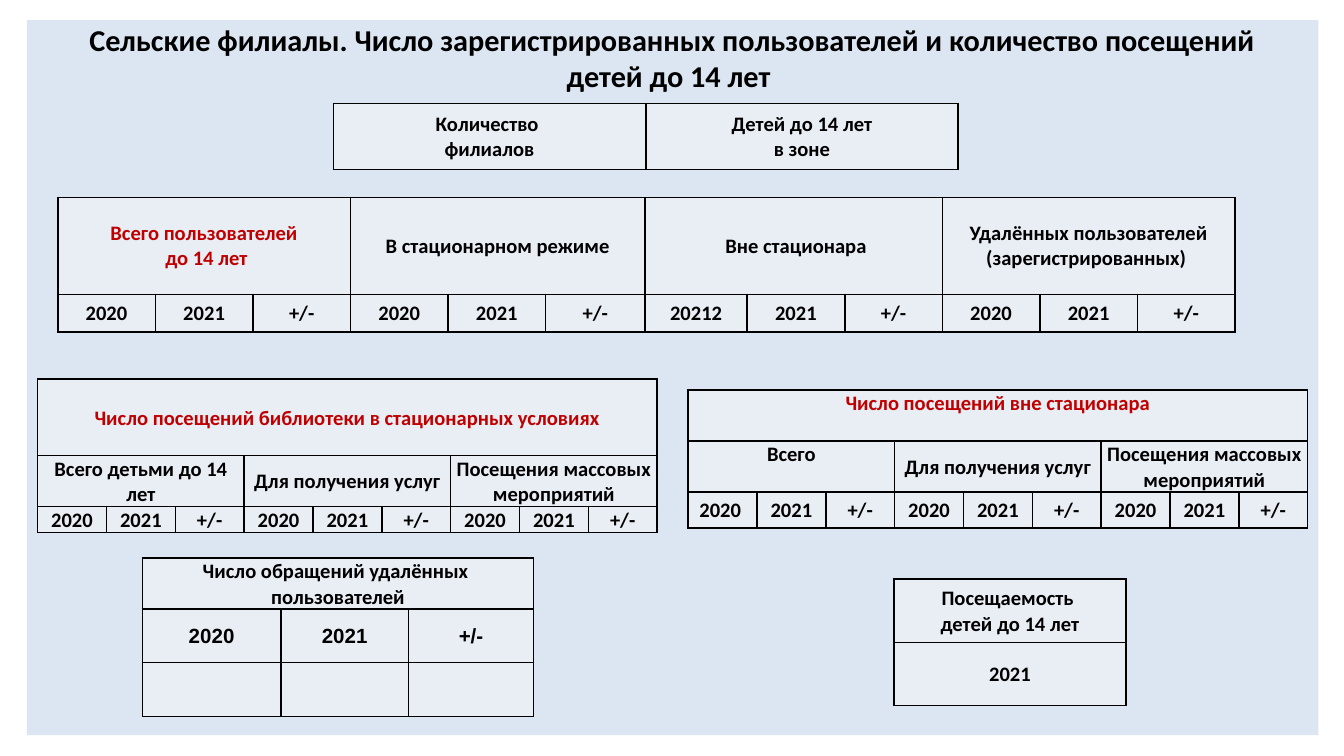
"""Build a slide of blank report tables on children's library use in rural branches."""
import lxml.etree
import pptx
import pptx.dml.color
import pptx.enum.shapes
import pptx.enum.text
import pptx.oxml.ns
import pptx.util

Inches = pptx.util.Inches
RGBColor = pptx.dml.color.RGBColor
ANCHOR = pptx.enum.text.MSO_ANCHOR
COLORS = {"panel": "DCE6F2", "cell": "E9EDF4", "black": "000000", "red": "C00000"}


def write_text(frame, text, size=11, font="Calibri", color="black"):
    for index, line in enumerate(text.split("\n")):
        paragraph = frame.add_paragraph() if index else frame.paragraphs[0]
        paragraph.alignment = pptx.enum.text.PP_ALIGN.CENTER
        run = paragraph.add_run()
        run.text = line
        run.font.size = pptx.util.Pt(size)
        run.font.name = font
        run.font.bold = True
        run.font.color.rgb = RGBColor.from_string(COLORS[color])


def add_grid(slide, left, top, widths, heights, rows, formats=None, anchors=None, top_inset=0.01):
    formats, anchors = formats or {}, anchors or {}
    shape = slide.shapes.add_table(
        len(heights), len(widths), Inches(left), Inches(top),
        Inches(sum(widths)), Inches(sum(heights)))
    table = shape.table
    table.first_row = table.horz_banding = False
    for column, width in zip(table.columns, widths):
        column.width = Inches(width)
    for row, height in zip(table.rows, heights):
        row.height = Inches(height)
    for cell in table.iter_cells():
        cell.fill.solid()
        cell.fill.fore_color.rgb = RGBColor.from_string(COLORS["cell"])
        cell.margin_left = cell.margin_right = Inches(0.01)
        cell.margin_top, cell.margin_bottom = Inches(top_inset), 0
        properties = cell._tc.get_or_add_tcPr()
        for index, side in enumerate(("lnL", "lnR", "lnT", "lnB")):
            border = lxml.etree.Element(pptx.oxml.ns.qn(f"a:{side}"), w="12700")
            fill = lxml.etree.SubElement(border, pptx.oxml.ns.qn("a:solidFill"))
            lxml.etree.SubElement(fill, pptx.oxml.ns.qn("a:srgbClr"), val=COLORS["black"])
            properties.insert(index, border)
    for row_index, texts in enumerate(rows):
        span = len(widths) // len(texts)
        for index, text in enumerate(texts):
            place = (row_index, index * span)
            cell = table.cell(*place)
            if span > 1:
                cell.merge(table.cell(row_index, place[1] + span - 1))
            cell.vertical_anchor = anchors.get(place, ANCHOR.MIDDLE)
            if text:
                write_text(cell.text_frame, text, **formats.get(place, {}))


presentation = pptx.Presentation()
presentation.slide_width = Inches(10)
presentation.slide_height = Inches(10 * 9 / 16)
slide = presentation.slides.add_slide(presentation.slide_layouts[6])

panel = slide.shapes.add_shape(
    pptx.enum.shapes.MSO_SHAPE.RECTANGLE,
    Inches(0.2), Inches(0.15), Inches(9.61), Inches(5.32))
panel.shadow.inherit = False
panel.fill.solid()
panel.fill.fore_color.rgb = RGBColor.from_string(COLORS["panel"])
panel.line.fill.background()

title = slide.shapes.add_textbox(Inches(0.5), Inches(0.23), Inches(9), Inches(0.4))
title.text_frame.word_wrap = True
title.text_frame.vertical_anchor = ANCHOR.MIDDLE
write_text(
    title.text_frame,
    "Сельские филиалы. Число зарегистрированных пользователей и количество посещений детей до 14 лет ",
    size=16.2)

years = ["2020", "2021", "+/-"]
red_header = {(0, 0): {"color": "red"}}
visit_widths = [4.61 / 9] * 9
user_width = (8.76 - 0.74 - 0.76) / 10
services = ["Для получения услуг", "Посещения массовых мероприятий"]

add_grid(slide, 2.48, 0.77, [4.65 / 2] * 2, [0.49],
         [["Количество \nфилиалов", "Детей до 14 лет\nв зоне"]])

add_grid(slide, 0.43, 1.47, [user_width] * 5 + [0.74, 0.76] + [user_width] * 5, [0.72, 0.28],
         [["Всего пользователей\n до 14 лет", "В стационарном режиме",
           "\u00a0Вне стационара", "Удалённых пользователей\n(зарегистрированных) "],
          years * 2 + ["20212", "2021", "+/-"] + years],
         formats=red_header, top_inset=0)

add_grid(slide, 6.65, 4.31, [1.73], [0.47] * 2,
         [["Посещаемость \nдетей до 14 лет"], ["2021"]])

add_grid(slide, 0.28, 2.82, visit_widths, [0.57, 0.38, 0.19],
         [["Число посещений библиотеки в стационарных условиях"],
          ["Всего детьми до 14 лет"] + services, years * 3],
         formats=red_header, anchors={(2, 0): ANCHOR.BOTTOM})

add_grid(slide, 5.12, 2.9, visit_widths, [0.38, 0.38, 0.27],
         [["Число посещений вне стационара"],
          ["Всего"] + services, ["2020 ", "2021", "+/-"] + years * 2],
         formats=red_header, anchors={(0, 0): ANCHOR.TOP, (1, 0): ANCHOR.TOP})

add_grid(slide, 1.06, 4.15, [1.03, 0.95, 0.93], [0.38, 0.4, 0.4],
         [["Число обращений удалённых  пользователей"], years, [""] * 3],
         formats={(1, column): {"font": "Arial"} for column in range(3)})

presentation.save("out.pptx")
